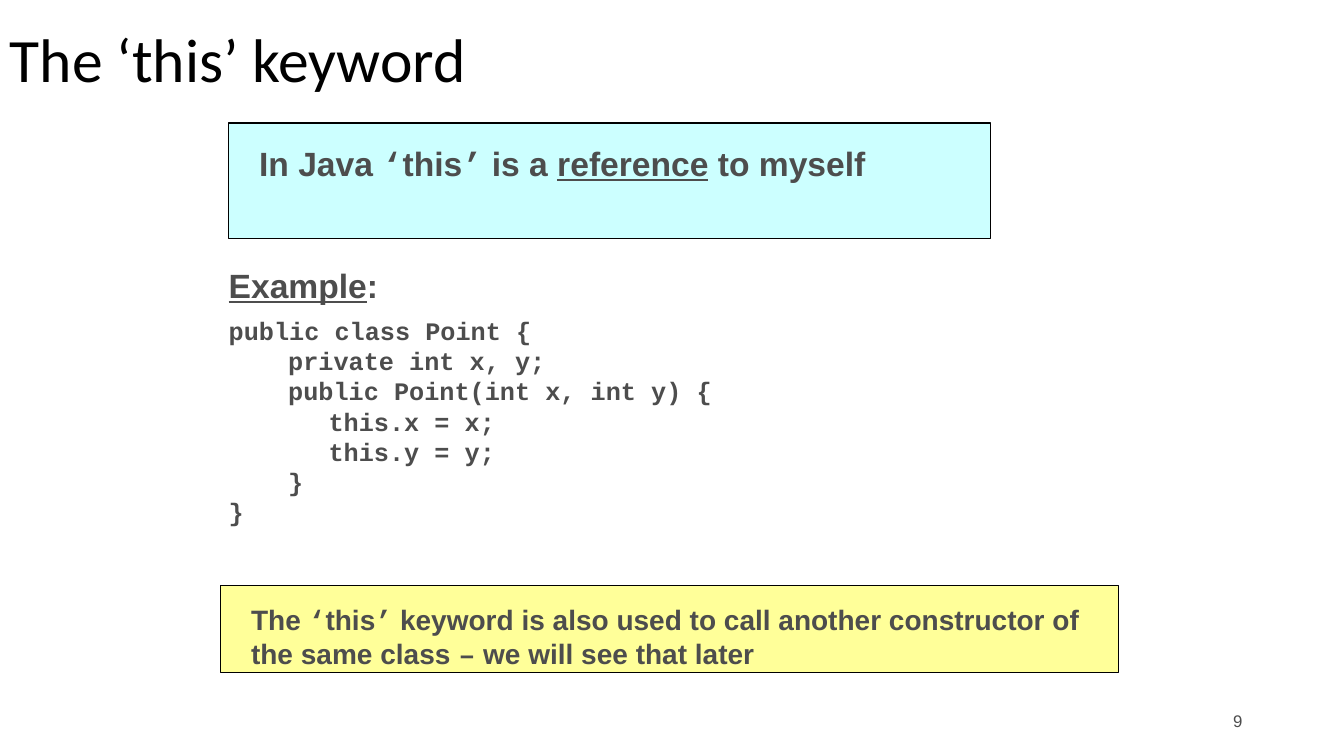
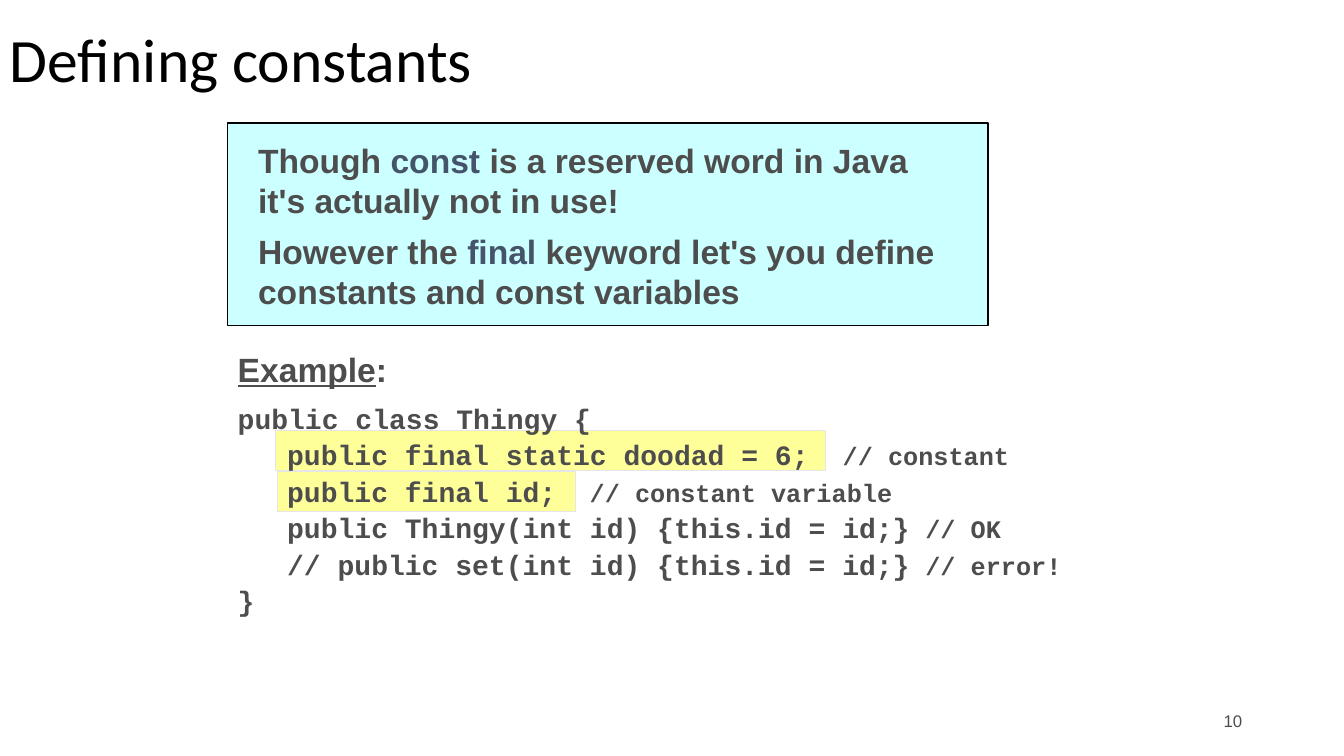
from lxml import etree
from pptx import Presentation
from pptx.dml.color import RGBColor as RGB
from pptx.enum.shapes import MSO_SHAPE as Shape
from pptx.enum.text import MSO_ANCHOR as Anchor, PP_ALIGN as Align
from pptx.oxml.ns import qn
from pptx.util import Inches, Pt


# Theme
class Theme:
    black, ink, slate = "000000", "4D4D4D", "44546A"
    aqua, lemon, pale = "CCFFFF", "FFFF99", "E7E6E6"
    sans, mono, head = "Arial", "Courier New", "Calibri"
    title, lead, body, code, foot = 44, 24, 20, 18, 12


# Run styles
MONO = {"font": Theme.mono}
LINE = {"under": True}
WORD = {"color": Theme.slate}
NOTE = {"size": Theme.code}

# Content: a paragraph is a list of runs, a run is text or (text, style)
SLIDES = [
    {
        "title": "The ‘this’ keyword",
        "page": "9",
        "boxes": [
            {"at": (2.27, 1.22, 7.55, 1.15), "fill": Theme.aqua,
             "size": Theme.lead, "lead": 28.6, "top": 0.2,
             "paras": [["In Java ", ("‘", MONO), "this", ("’", MONO),
                        " is a ", ("reference", LINE), " to myself"]]},
            {"at": (2.19, 5.81, 8.9, 0.86), "fill": Theme.lemon,
             "size": Theme.body, "lead": 24.3, "top": 0.16,
             "paras": [["The ", ("‘", MONO), "this", ("’", MONO),
                        " keyword is also used to call another constructor"
                        " of the same class ", ("–", MONO),
                        " we will see that later"]]},
        ],
        "marks": [],
        "code": {
            "at": (2.17, 2.58, 9, 3.16), "size": Theme.code, "lead": 21.6,
            "tabs": [0.59, 0.99],
            "lines": [
                ["public class Point {"],
                ["\tprivate int x, y;"],
                ["\tpublic Point(int x, int y) {"],
                ["\t\tthis.x = x;"],
                ["\t\tthis.y = y;"],
                ["\t}"],
                ["}"],
            ]},
    },
    {
        "title": "Defining constants",
        "page": "10",
        "boxes": [
            {"at": (2.26, 1.22, 7.54, 2.01), "fill": Theme.aqua,
             "size": Theme.lead, "lead": 28.6, "top": 0.17,
             "paras": [["Though ", ("const", WORD),
                        " is a reserved word in Java\vit's actually not in use!"],
                       ["However the ", ("final", WORD),
                        " keyword let's you define constants"
                        " and const variables"]]},
        ],
        "marks": [(2.73, 4.27, 5.46, 0.4), (2.75, 4.68, 2.96, 0.4)],
        "code": {
            "at": (2.26, 3.41, 9, 3.25), "size": Theme.body, "lead": 26,
            "tabs": [0.49], "ends": {1: 6.0, 2: 3.49},
            "lines": [
                ["public class Thingy {"],
                ["\tpublic final static doodad = 6;", ("\t// constant", NOTE)],
                ["\tpublic final id;", ("\t// constant variable", NOTE)],
                ["\tpublic Thingy(int id) {this.id = id;}", (" // OK", NOTE)],
                ["\t// public set(int id) {this.id = id;}",
                 (" // error!", NOTE)],
                ["}"],
            ]},
    },
]


# Helpers
def put(para, runs, *, size, font=Theme.sans, color=Theme.ink, bold=False,
        under=False, lead=None, before=0, align=None, tabs=()):
    """Fill one paragraph with runs; a run style overrides the base format."""
    para.alignment = align
    para.line_spacing = lead
    para.space_before = Pt(before)
    base = {"size": size, "font": font, "color": color, "under": under}
    for item in runs:
        text, extra = (item, {}) if isinstance(item, str) else item
        look = {**base, **extra}
        for n, part in enumerate(text.split("\v")):
            if n:
                para.add_line_break()
            run = para.add_run()
            run.text = part
            run.font.size, run.font.name = Pt(look["size"]), look["font"]
            run.font.bold, run.font.underline = bold, look["under"]
            run.font.color.rgb = RGB.from_string(look["color"])
    if tabs:
        stops = etree.SubElement(para._p.get_or_add_pPr(), qn("a:tabLst"))
        for pos in tabs:
            etree.SubElement(stops, qn("a:tab"), pos=str(Inches(pos)), algn="l")


def paras(frame, count):
    """Return the first paragraph and as many new ones as needed."""
    return [frame.paragraphs[0]] + [frame.add_paragraph()
                                    for _ in range(count - 1)]


def area(slide, at, anchor=Anchor.TOP):
    frame = slide.shapes.add_textbox(*map(Inches, at)).text_frame
    frame.word_wrap = True
    frame.vertical_anchor = anchor
    return frame


def rect(slide, at, fill, line):
    box = slide.shapes.add_shape(Shape.RECTANGLE, *map(Inches, at))
    box.shadow.inherit = False
    box.fill.solid()
    box.fill.fore_color.rgb = RGB.from_string(fill)
    box.line.color.rgb = RGB.from_string(line)
    box.line.width = Pt(0.75)
    return box


def panel(slide, data):
    frame = rect(slide, data["at"], data["fill"], Theme.black).text_frame
    frame.word_wrap = True
    frame.vertical_anchor = Anchor.TOP
    frame.margin_left, frame.margin_top = Inches(0.3), Inches(data["top"])
    frame.margin_right = frame.margin_bottom = 0
    rows = data["paras"]
    for n, (para, runs) in enumerate(zip(paras(frame, len(rows)), rows)):
        put(para, runs, size=data["size"], bold=True, align=Align.LEFT,
            lead=Pt(data["lead"]), before=8 if n else 0)


def listing(slide, data):
    rows, ends = data["lines"], data.get("ends", {})
    head, *rest = paras(area(slide, data["at"]), len(rows) + 1)
    put(head, [("Example", LINE), ":"], size=Theme.lead, bold=True)
    for n, (para, runs) in enumerate(zip(rest, rows)):
        tabs = data["tabs"] + ([ends[n]] if n in ends else [])
        put(para, runs, size=data["size"], font=Theme.mono, bold=True,
            lead=Pt(data["lead"]), before=0 if n else 7, tabs=tabs)


def frame_up(slide, data):
    """Draw the title and page number that every slide shares."""
    title = area(slide, (0, 0.16, 13.33, 0.93), Anchor.MIDDLE)
    put(title.paragraphs[0], [data["title"]], size=Theme.title,
        font=Theme.head, color=Theme.black, lead=0.9)
    page = area(slide, (9.42, 6.95, 3, 0.4), Anchor.MIDDLE)
    put(page.paragraphs[0], [data["page"]], size=Theme.foot,
        align=Align.RIGHT)


# Build
def main():
    deck = Presentation()
    deck.slide_width, deck.slide_height = Inches(13.33), Inches(7.5)
    for data in SLIDES:
        slide = deck.slides.add_slide(deck.slide_layouts[6])
        frame_up(slide, data)
        for at in data["marks"]:
            rect(slide, at, Theme.lemon, Theme.pale)
        listing(slide, data["code"])
        for box in data["boxes"]:
            panel(slide, box)
    deck.save("out.pptx")


if __name__ == "__main__":
    main()
